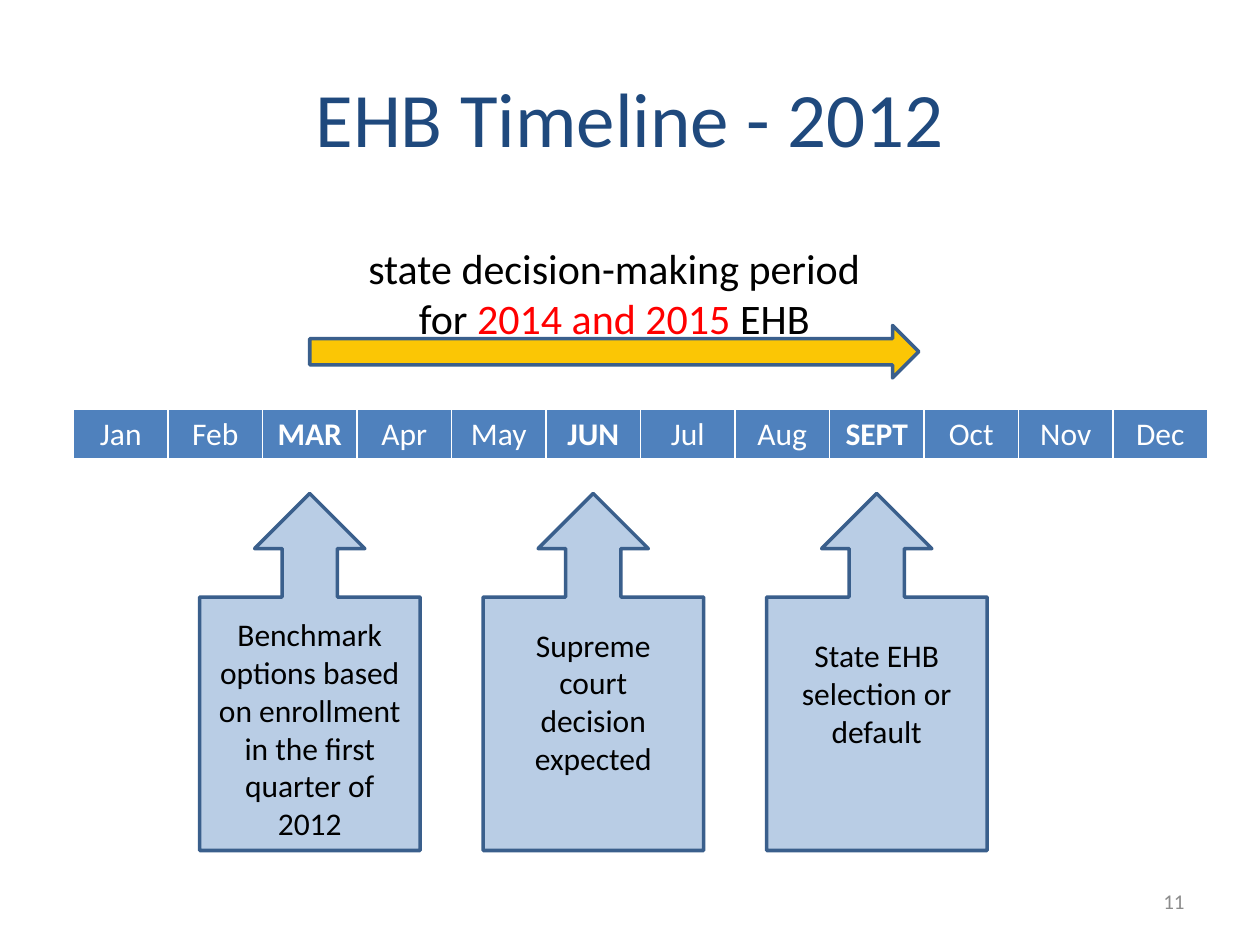
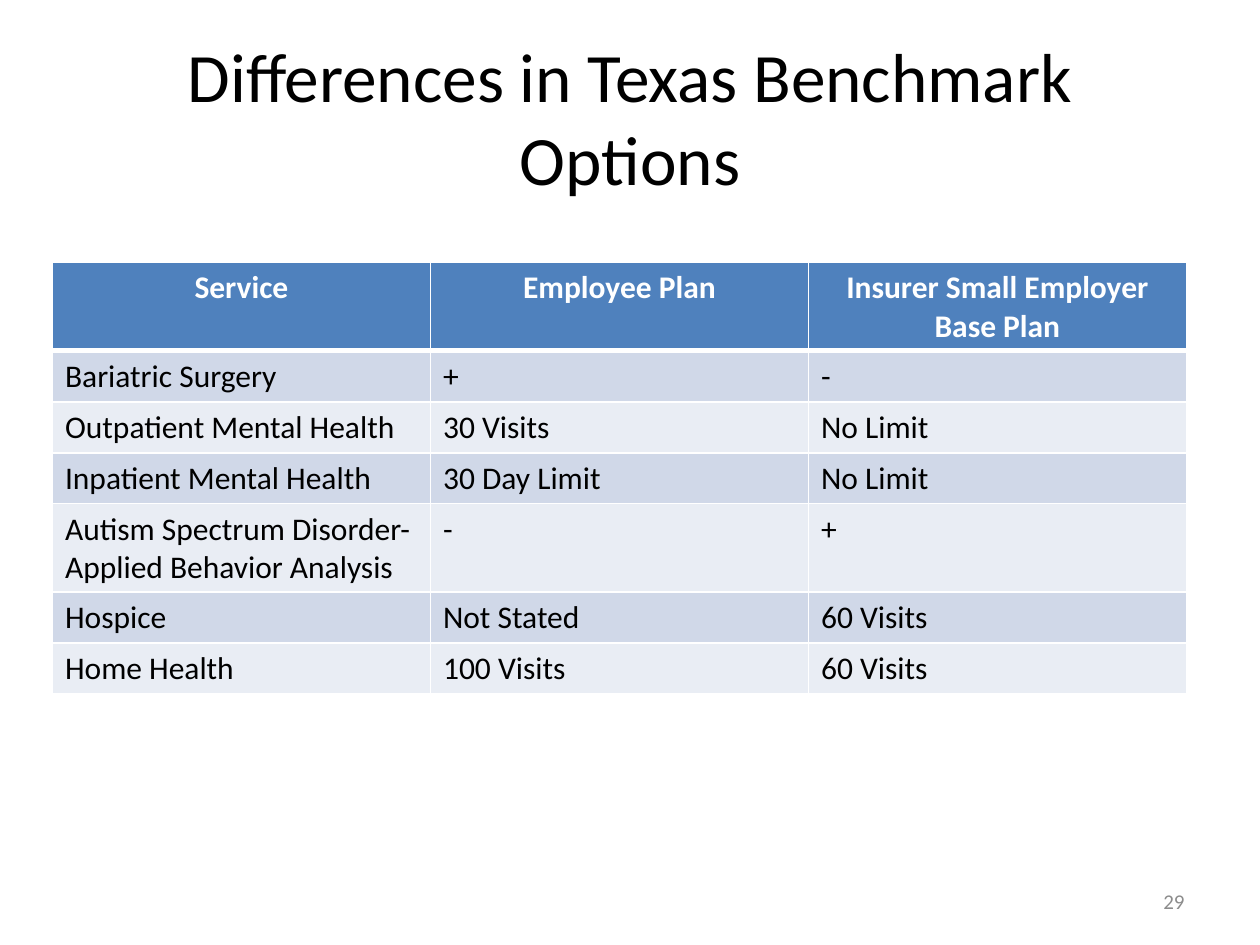
import dataclasses

import lxml.etree
import pptx
import pptx.dml.color
import pptx.enum.shapes
import pptx.enum.text
import pptx.oxml.ns
import pptx.util

COLORS = {
    "title": "1F497D", "text": "000000", "white": "FFFFFF", "accent": "FF0000",
    "header": "4F81BD", "band_dark": "D0D8E8", "band_light": "E9EDF4",
    "arrow": "FBC605", "callout": "B9CDE5", "outline": "3A5F8C", "number": "8C8C8C",
}
FONT = "Calibri"
SLIDE_WIDTH, SLIDE_HEIGHT = 10, 7.5
COLUMNS, ROWS = 120, 90
ALIGN = pptx.enum.text.PP_ALIGN
ANCHOR = pptx.enum.text.MSO_ANCHOR
SHAPES = pptx.enum.shapes.MSO_SHAPE

MONTHS = ["Jan", "Feb", "MAR", "Apr", "May", "JUN", "Jul", "Aug", "SEPT", "Oct", "Nov", "Dec"]
MILESTONES = [
    ("MAR", 21, "Benchmark options based on enrollment in the first quarter of 2012"),
    ("JUN", 15, "Supreme court decision expected"),
    ("SEPT", 17, "State EHB selection or default"),
]
BENCHMARKS = [
    ["Service", "Employee Plan", "Insurer Small Employer Base Plan"],
    ["Bariatric Surgery", "+", "-"],
    ["Outpatient Mental Health", "30 Visits", "No Limit"],
    ["Inpatient Mental Health", "30 Day Limit", "No Limit"],
    ["Autism Spectrum Disorder- Applied Behavior Analysis", "-", "+"],
    ["Hospice", "Not Stated", "60 Visits"],
    ["Home Health", "100 Visits", "60 Visits"],
]


@dataclasses.dataclass
class Box:
    left: float
    top: float
    width: float
    height: float

    def inside(self, left, top, width, height):
        return Box(self.left + left, self.top + top, width, height)

    def emu(self):
        across = SLIDE_WIDTH / COLUMNS
        down = SLIDE_HEIGHT / ROWS
        lengths = (self.left * across, self.top * down, self.width * across, self.height * down)
        return [pptx.util.Inches(length) for length in lengths]


def rgb(name):
    return pptx.dml.color.RGBColor.from_string(COLORS[name])


def style_span(span, size, color, bold=False):
    span.font.name = FONT
    span.font.size = pptx.util.Pt(size)
    span.font.bold = bold
    span.font.color.rgb = rgb(color)


def style_text(frame, size, color="text", align=ALIGN.CENTER, bold=False):
    for para in frame.paragraphs:
        para.alignment = align
        for span in para.runs:
            style_span(span, size, color, bold)


def add_text(page, box, text, size, color="text", align=ALIGN.CENTER, anchor=ANCHOR.TOP):
    frame = page.shapes.add_textbox(*box.emu()).text_frame
    frame.word_wrap = True
    frame.vertical_anchor = anchor
    frame.text = text
    style_text(frame, size, color, align)
    return frame


def add_block(page, kind, box, fill):
    block = page.shapes.add_shape(kind, *box.emu())
    block.shadow.inherit = False
    block.fill.solid()
    block.fill.fore_color.rgb = rgb(fill)
    block.line.color.rgb = rgb("outline")
    block.line.width = pptx.util.Pt(2)
    return block


def set_borders(cell, bottom):
    properties = cell._tc.get_or_add_tcPr()
    for side, points in (("L", 1), ("R", 1), ("T", 1), ("B", bottom)):
        line = lxml.etree.SubElement(
            properties, pptx.oxml.ns.qn(f"a:ln{side}"), w=str(pptx.util.Pt(points)))
        fill = lxml.etree.SubElement(line, pptx.oxml.ns.qn("a:solidFill"))
        lxml.etree.SubElement(fill, pptx.oxml.ns.qn("a:srgbClr"), val=COLORS["white"])


def add_grid(page, box, values, bold_words):
    table = page.shapes.add_table(len(values), len(values[0]), *box.emu()).table
    for row, texts in enumerate(values):
        is_header = row == 0
        fill = "header" if is_header else ("band_light", "band_dark")[row % 2]
        for column, text in enumerate(texts):
            cell = table.cell(row, column)
            set_borders(cell, 3 if is_header else 1)
            cell.fill.solid()
            cell.fill.fore_color.rgb = rgb(fill)
            cell.text = text
            style_text(
                cell.text_frame, 18,
                "white" if is_header else "text",
                ALIGN.CENTER if is_header else ALIGN.LEFT,
                text in bold_words)


def add_page(deck, page_box, title, size, color, number):
    page = deck.slides.add_slide(deck.slide_layouts[5])
    heading = page.shapes.title
    heading.left, heading.top, heading.width, heading.height = page_box.inside(6, 3.6, 108, 15).emu()
    frame = heading.text_frame
    frame.text = title
    frame.word_wrap = True
    frame.auto_size = pptx.enum.text.MSO_AUTO_SIZE.NONE
    frame.vertical_anchor = ANCHOR.MIDDLE
    style_text(frame, size, color)
    add_text(page, page_box.inside(86, 83.4, 28, 4.8), number, 12, "number", ALIGN.RIGHT, ANCHOR.MIDDLE)
    return page


def add_decision_period(page, box):
    add_block(page, SHAPES.RIGHT_ARROW, box.inside(0, 8.5, box.width, 5), "arrow")
    frame = add_text(
        page, box.inside(0, 0, box.width, 11),
        "state decision-making period\nfor ", 24)
    para = frame.paragraphs[1]
    for text, color in (("2014 and 2015 ", "accent"), ("EHB", "text")):
        span = para.add_run()
        span.text = text
        style_span(span, 24, color)


def add_milestones(page, box):
    month_width = box.width / len(MONTHS)
    callout_width = 21
    for order, (month, text_width, text) in enumerate(MILESTONES):
        center = (MONTHS.index(month) + 0.5) * month_width
        callout = add_block(
            page, SHAPES.UP_ARROW_CALLOUT,
            box.inside(center - callout_width / 2, 0, callout_width, box.height), "callout")
        for index, share in enumerate((0.25, 0.25, 0.25, 0.71)):
            callout.adjustments[index] = share
        text_top = 11 + order
        add_text(
            page,
            box.inside(center - text_width / 2, text_top, text_width, box.height - text_top),
            text, 18)


def add_timeline_page(deck, page_box):
    page = add_page(deck, page_box, "EHB Timeline - 2012", 44, "title", "11")
    add_grid(page, page_box.inside(7, 39, 108, 4.8), [MONTHS], ("MAR", "JUN", "SEPT"))
    add_decision_period(page, page_box.inside(29.5, 22.5, 58, 13.5))
    add_milestones(page, page_box.inside(7, 47, 108, 34))


def add_benchmark_page(deck, page_box):
    page = add_page(deck, page_box, "Differences in Texas Benchmark Options", 39.6, "text", "29")
    add_grid(page, page_box.inside(5, 25, 108, 34), BENCHMARKS, BENCHMARKS[0])


def main():
    deck = pptx.Presentation()
    deck.slide_width = pptx.util.Inches(SLIDE_WIDTH)
    deck.slide_height = pptx.util.Inches(SLIDE_HEIGHT)
    page_box = Box(0, 0, COLUMNS, ROWS)
    add_timeline_page(deck, page_box)
    add_benchmark_page(deck, page_box)
    deck.save("out.pptx")


if __name__ == "__main__":
    main()
